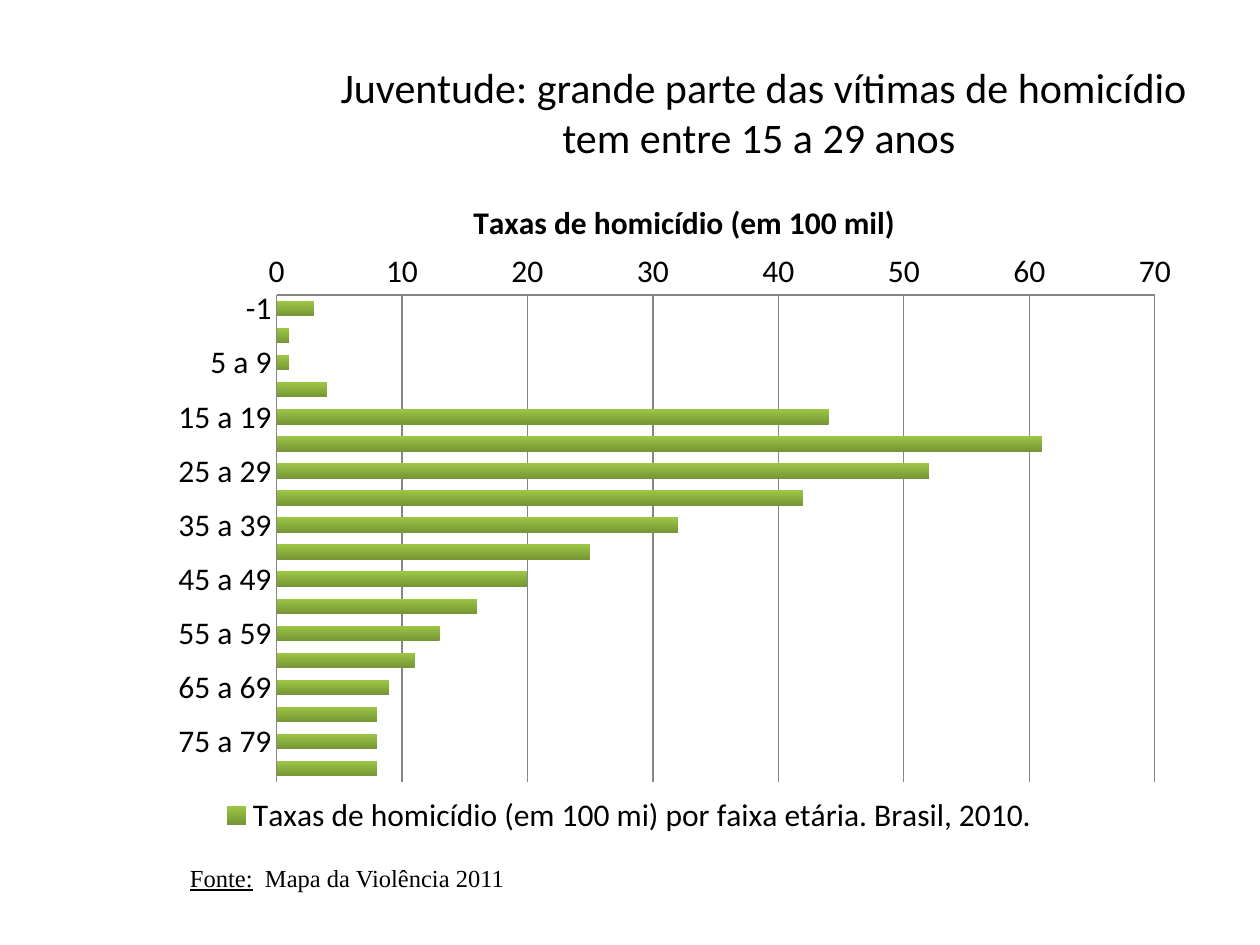
import pptx
import pptx.util
import pptx.chart.data
import pptx.dml.color
import pptx.enum.chart
import pptx.enum.text
import lxml.etree
from pptx.oxml import parse_xml
from pptx.oxml.ns import nsdecls
from pptx.util import Cm

AGES = ["-1", "1 a 4", "5 a 9", "10 a 14"]
AGES += [f"{age} a {age + 4}" for age in range(15, 80, 5)] + ["80 e +"]
RATES = [3, 1, 1, 4, 44, 61, 52, 42, 32, 25, 20, 16, 13, 11, 9, 8, 8, 8]
BLACK, GRID = "000000", "868686"


def colour(value):
    return pptx.dml.color.RGBColor.from_string(value)


def set_font(font, size, name="Calibri", bold=False):
    font.size = pptx.util.Pt(size)
    font.name = name
    font.bold = bold
    font.color.rgb = colour(BLACK)


def add_span(para, text, size, name, underline=False):
    span = para.add_run()
    span.text = text
    set_font(span.font, size, name)
    span.font.underline = underline


def set_layout(element, successors, inner=False, **fractions):
    """Place a chart part by fractions of the chart's own box."""
    for old in element.findall(pptx.oxml.ns.qn("c:layout")):
        element.remove(old)
    parts = '<c:layoutTarget val="inner"/>' if inner else ""
    parts += "".join(f'<c:{key}Mode val="edge"/>' for key in "xy")
    parts += "".join(f'<c:{key} val="{value}"/>' for key, value in fractions.items())
    layout = parse_xml(f'<c:layout {nsdecls("c")}><c:manualLayout>{parts}'
                       "</c:manualLayout></c:layout>")
    tags = [pptx.oxml.ns.qn(tag) for tag in successors]
    following = next(child for child in element if child.tag in tags)
    following.addprevious(layout)


def add_title(page, left, top, width, height):
    box = page.shapes.title
    box.left, box.top, box.width, box.height = left, top, width, height
    frame = box.text_frame
    frame.word_wrap = True
    frame.auto_size = pptx.enum.text.MSO_AUTO_SIZE.NONE
    frame.vertical_anchor = pptx.enum.text.MSO_ANCHOR.MIDDLE
    para = frame.paragraphs[0]
    para.alignment = pptx.enum.text.PP_ALIGN.CENTER
    add_span(para, "Juventude: grande parte das vítimas de homicídio "
             "tem entre 15 a 29 anos ", 24, "Calibri")
    para.add_line_break()
    set_font(para.font, 24)


def style_axis(axis):
    axis.major_tick_mark = pptx.enum.chart.XL_TICK_MARK.NONE
    axis.minor_tick_mark = pptx.enum.chart.XL_TICK_MARK.NONE
    axis.format.line.color.rgb = colour(GRID)
    set_font(axis.tick_labels.font, 18)


def add_rate_chart(page, left, top, width, height):
    data = pptx.chart.data.CategoryChartData(number_format="0")
    data.categories = AGES
    data.add_series("Taxas de homicídio (em 100 mi) por faixa etária. Brasil, 2010. ", RATES)
    chart = page.shapes.add_chart(pptx.enum.chart.XL_CHART_TYPE.BAR_CLUSTERED,
                                  left, top, width, height, data).chart
    set_font(chart.font, 18)

    # Heading
    chart.has_title = True
    span = chart.chart_title.text_frame.paragraphs[0].add_run()
    span.text = "Taxas de homicídio (em 100 mil)"
    set_font(span.font, 18, bold=True)
    chart.chart_title.include_in_layout = False
    set_layout(chart.chart_title._element, ["c:overlay"], x=0.3, y=0.04)

    # Axes
    ages, rates = chart.category_axis, chart.value_axis
    style_axis(ages)
    style_axis(rates)
    ages.reverse_order = True
    ages.has_major_gridlines = False
    rates.minimum_scale, rates.maximum_scale, rates.major_unit = 0, 70, 10
    rates.has_major_gridlines = True
    rates.major_gridlines.format.line.color.rgb = colour(GRID)

    # Bars
    plot = chart.plots[0]
    plot.gap_width = 75
    plot.vary_by_categories = False
    fill = plot.series[0].format.fill
    fill.gradient()
    fill.gradient_angle = 90
    for stop, shade in zip(fill.gradient_stops, ("769535", "9CC746")):
        stop.color.rgb = colour(shade)
    area = chart._chartSpace.chart.plotArea
    set_layout(area, ["c:barChart"], inner=True, x=0.115, y=0.185, w=0.85, h=0.707)

    # Legend
    chart.has_legend = True
    legend = chart.legend
    legend.position = pptx.enum.chart.XL_LEGEND_POSITION.BOTTOM
    legend.include_in_layout = False
    set_font(legend.font, 18)
    set_layout(legend._element, ["c:overlay"], x=0.05, y=0.91, w=0.82, h=0.06)


def add_source(page, left, top, width, height):
    frame = page.shapes.add_textbox(left, top, width, height).text_frame
    frame.word_wrap = True
    frame.auto_size = pptx.enum.text.MSO_AUTO_SIZE.SHAPE_TO_FIT_TEXT
    para = frame.paragraphs[0]
    add_span(para, "Fonte:", 14, "Times New Roman", underline=True)
    add_span(para, "  Mapa da Violência 2011", 14, "Times New Roman")


def main():
    deck = pptx.Presentation()
    deck.slide_width, deck.slide_height = Cm(25.4), Cm(19.05)
    page = deck.slides.add_slide(deck.slide_layouts.get_by_name("Title Only"))
    add_rate_chart(page, Cm(3.18), Cm(3.38), Cm(20.83), Cm(13.89))
    add_title(page, Cm(6.1), Cm(0.71), Cm(18.59), Cm(4.09))
    add_source(page, Cm(3.58), Cm(17.27), Cm(11), Cm(0.86))
    deck.save("out.pptx")


if __name__ == "__main__":
    main()
